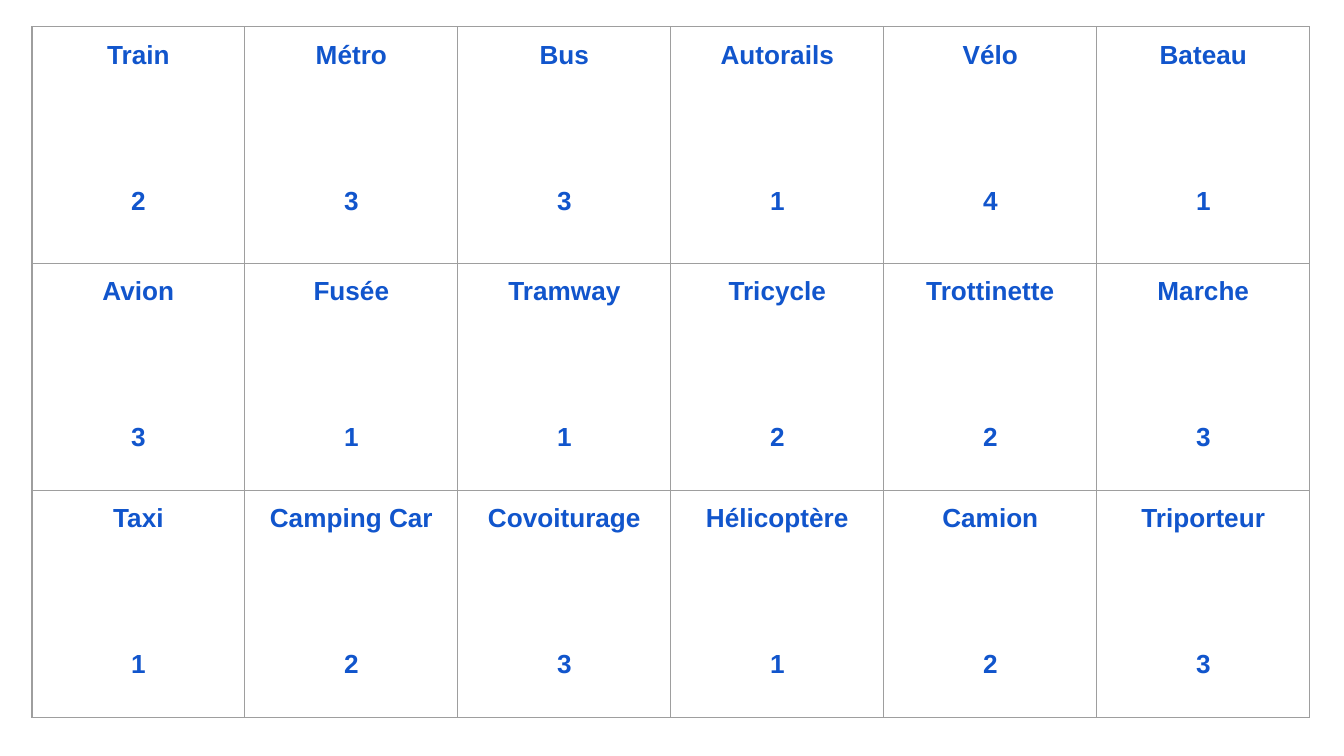
"""Build a slide with a grid of means of transport and their counts."""
from lxml import etree
from pptx import Presentation
from pptx import util as u
from pptx.dml.color import RGBColor
from pptx.enum import text
from pptx.oxml import ns

BLUE = "1155CC"
GREY = "9E9E9E"
COLUMN_WIDTH = 114.1
ROW_HEIGHTS = [126.7, 121.6, 121.6]
TRANSPORTS = [
    [("Train", 2), ("Métro", 3), ("Bus", 3),
     ("Autorails", 1), ("Vélo", 4), ("Bateau", 1)],
    [("Avion", 3), ("Fusée", 1), ("Tramway", 1),
     ("Tricycle", 2), ("Trottinette", 2), ("Marche", 3)],
    [("Taxi", 1), ("Camping Car", 2), ("Covoiturage", 3),
     ("Hélicoptère", 1), ("Camion", 2), ("Triporteur", 3)],
]


def rgb(value):
    """Turn a hex string into a colour."""
    return RGBColor.from_string(value)


def add_run(p, words):
    """Add a centred bold blue run to a paragraph."""
    p.alignment = text.PP_ALIGN.CENTER
    r = p.add_run()
    r.text = words
    r.font.name = "Arial"
    r.font.size = u.Pt(14)
    r.font.bold = True
    r.font.color.rgb = rgb(BLUE)


def set_borders(cell, color, width):
    """Draw the four borders of a cell."""
    tc_pr = cell._tc.get_or_add_tcPr()
    for side in ("a:lnL", "a:lnR", "a:lnT", "a:lnB"):
        ln = etree.SubElement(tc_pr, ns.qn(side), w=str(u.Pt(width)))
        fill = etree.SubElement(ln, ns.qn("a:solidFill"))
        etree.SubElement(fill, ns.qn("a:srgbClr"), val=color)


def fill_cell(cell, name, count):
    """Write a name at the top of a cell and its count below."""
    set_borders(cell, GREY, 0.75)
    cell.fill.background()
    cell.margin_left = cell.margin_right = u.Pt(7.2)
    cell.margin_top = cell.margin_bottom = u.Pt(7.2)
    cell.vertical_anchor = text.MSO_ANCHOR.TOP
    tf = cell.text_frame
    add_run(tf.paragraphs[0], name)
    p = tf.add_paragraph()
    p.space_before = u.Pt(62.7)
    add_run(p, str(count))


def add_grid(s, left, top, rows):
    """Add the table of transports."""
    columns = len(rows[0])
    frame = s.shapes.add_table(
        len(rows), columns, u.Pt(left), u.Pt(top),
        u.Pt(columns * COLUMN_WIDTH), u.Pt(sum(ROW_HEIGHTS)))
    table = frame.table
    table.first_row = table.horz_banding = False
    for column in table.columns:
        column.width = u.Pt(COLUMN_WIDTH)
    for i, row in enumerate(rows):
        table.rows[i].height = u.Pt(ROW_HEIGHTS[i])
        for j, (name, count) in enumerate(row):
            fill_cell(table.cell(i, j), name, count)


def main():
    """Create and save the presentation."""
    prs = Presentation()
    prs.slide_width, prs.slide_height = u.Pt(720), u.Pt(405)
    s = prs.slides.add_slide(prs.slide_layouts[6])
    add_grid(s, 17.1, 14.4, TRANSPORTS)
    prs.save("out.pptx")


if __name__ == "__main__":
    main()
